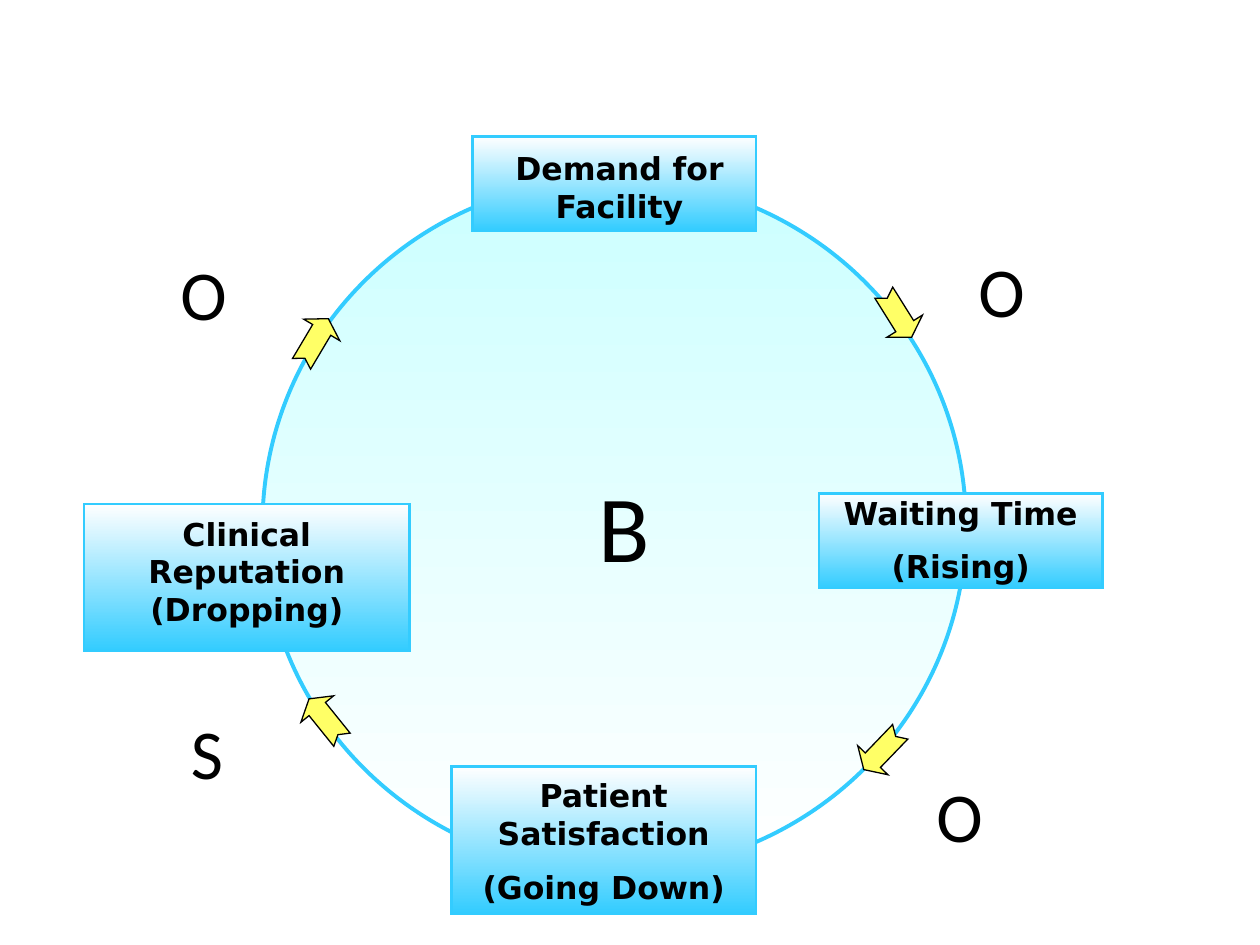
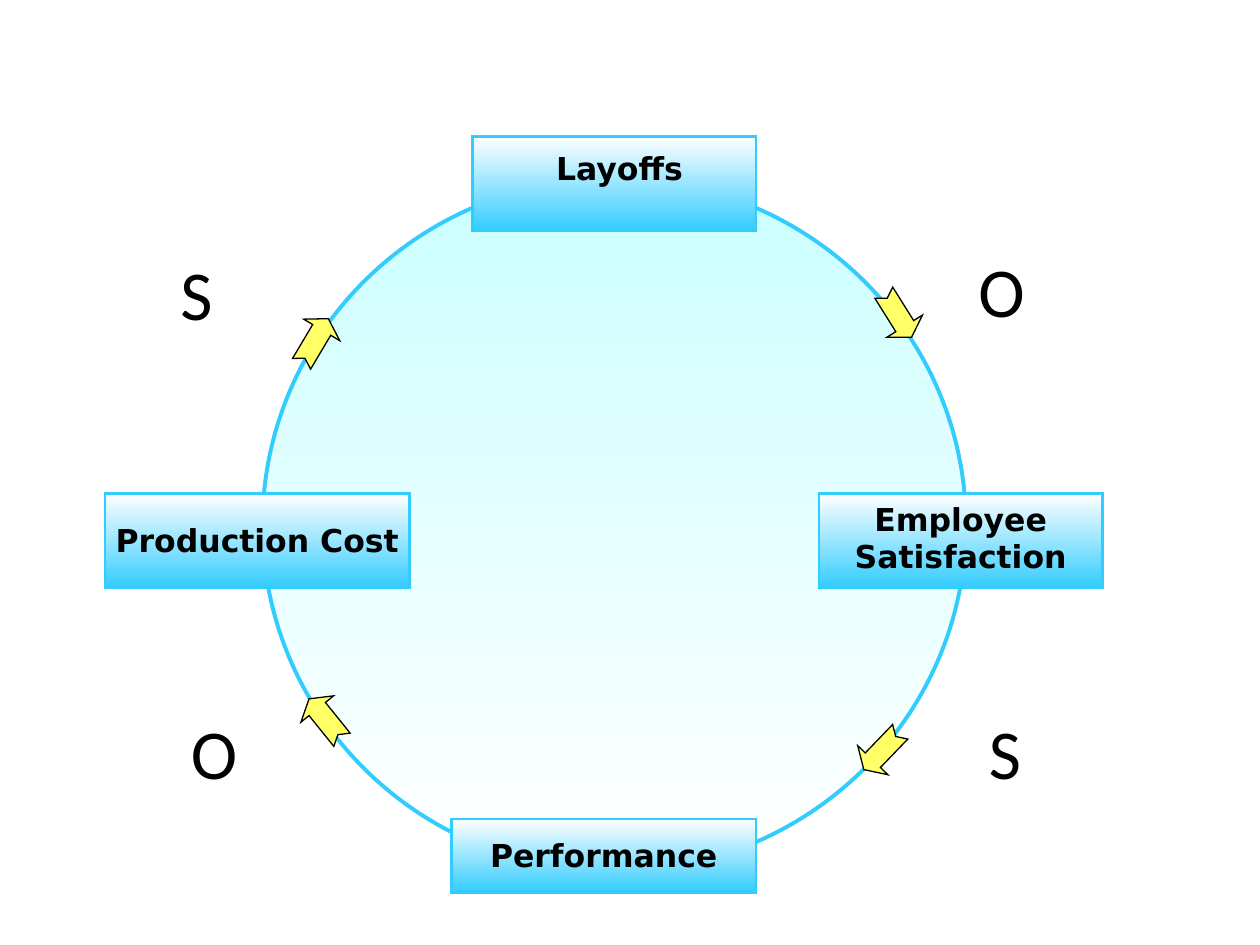
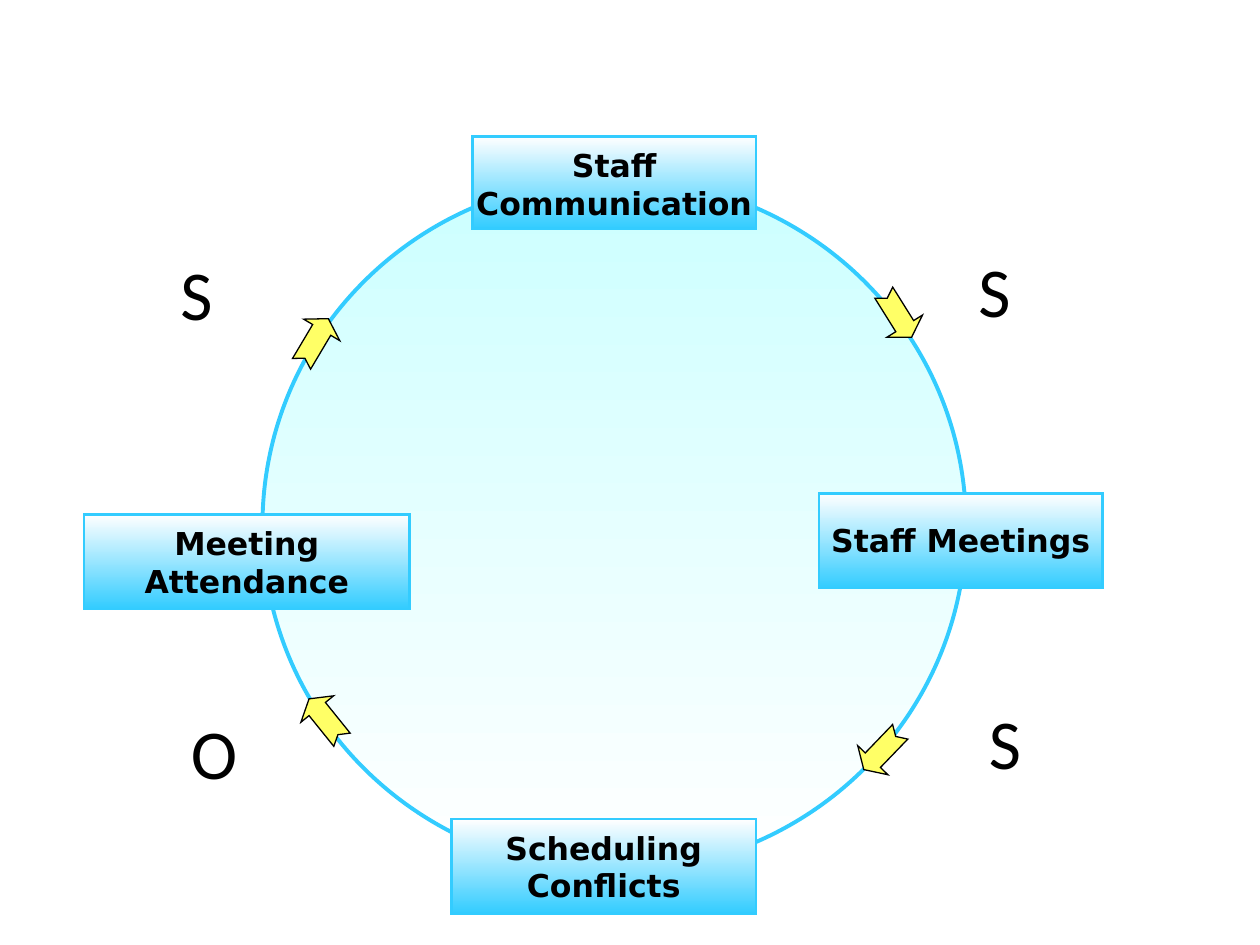
from lxml import etree
from pptx import Presentation
from pptx.dml.color import RGBColor
from pptx.enum import shapes, text
from pptx.oxml import ns
from pptx.util import Pt

HUES = {"sky": "33CCFF", "pale": "CCFFFF", "white": "FFFFFF",
        "gold": "FFFF66", "black": "000000"}
KIND = shapes.MSO_SHAPE
LABEL = ("DejaVu Sans", 18, True)
MARK = ("Calibri", 40, False)

# Arrows on the ring: left, top, turn
ARROWS = [(165, 183, 300.7), (171, 399, 231.1), (489, 417, 133.9), (498, 168, 58)]

# Nodes run left, top, bottom, right: box, caption frame, caption lines.
# Marks: letter, left, top, width.
LOOPS = [
    {"mid": "B",
     "nodes": [
         ((48, 288, 186, 84), (42, 290.5, 198, 71), ["Clinical Reputation (Dropping)"]),
         ((270, 78, 162, 54), (276, 81.5, 156, 50.5), ["Demand for Facility"]),
         ((258, 438, 174, 84), (252, 440, 186, 81), ["Patient Satisfaction", "(Going Down)"]),
         ((468, 282, 162, 54), (462, 278.5, 174, 61), ["Waiting Time", "(Rising)"])],
     "marks": [("O", 552, 138, 46), ("O", 96, 139.5, 46),
               ("S", 102, 402, 42.5), ("O", 528, 438, 46)]},
    {"mid": "",
     "nodes": [
         ((60, 282, 174, 54), (48, 294, 198, 29), ["Production Cost"]),
         ((270, 78, 162, 54), (276, 81.5, 156, 29), ["Layoffs"]),
         ((258, 468, 174, 42), (252, 474, 186, 29), ["Performance"]),
         ((468, 282, 162, 54), (462, 282, 174, 50.5), ["Employee Satisfaction"])],
     "marks": [("O", 552, 138, 46), ("S", 96, 139.5, 42.5),
               ("O", 102, 402, 46), ("S", 558, 402, 42.5)]},
    {"mid": "",
     "nodes": [
         ((48, 294, 186, 54), (42, 296, 198, 50.5), ["Meeting Attendance"]),
         ((270, 78, 162, 52.5), (264, 80, 174, 50.5), ["Staff Communication"]),
         ((258, 468, 174, 54), (252, 470, 186, 50.5), ["Scheduling Conflicts"]),
         ((468, 282, 162, 54), (462, 294, 174, 29), ["Staff Meetings"])],
     "marks": [("S", 552, 138, 33), ("S", 96, 139.5, 42.5),
               ("O", 102, 402, 46), ("S", 558, 396, 42.5)]},
]


def draw(slide, kind, frame, fills, edge, width):
    """Add a sharp-cornered shape with a plain fill, or a top-down blend of two hues."""
    shape = slide.shapes.add_shape(kind, *[Pt(n) for n in frame])
    shape.shadow.inherit = False
    if len(fills) == 1:
        shape.fill.solid()
        shape.fill.fore_color.rgb = RGBColor.from_string(HUES[fills[0]])
    else:
        shape.fill.gradient()
        shape.fill.gradient_angle = 270
        for stop, hue in zip(shape.fill.gradient_stops, fills):
            stop.color.rgb = RGBColor.from_string(HUES[hue])
    shape.line.color.rgb = RGBColor.from_string(HUES[edge])
    shape.line.width = Pt(width)
    outline = shape.element.spPr.find(ns.qn("a:ln"))
    etree.SubElement(outline, ns.qn("a:miter"), lim="800000")
    return shape


def write(para, words, face, size, bold):
    """Add one run of black text to a paragraph."""
    run = para.add_run()
    run.text = words
    run.font.name, run.font.size, run.font.bold = face, Pt(size), bold
    run.font.color.rgb = RGBColor.from_string(HUES["black"])


deck = Presentation()
deck.slide_width, deck.slide_height = Pt(720), Pt(540)

for loop in LOOPS:
    slide = deck.slides.add_slide(deck.slide_layouts[6])

    ring = draw(slide, KIND.OVAL, (150, 102, 402, 396), ["pale", "white"], "sky", 2.25)
    if loop["mid"]:
        frame = ring.text_frame
        frame.word_wrap = False
        frame.vertical_anchor = text.MSO_ANCHOR.MIDDLE
        para = frame.paragraphs[0]
        para.alignment = text.PP_ALIGN.CENTER
        write(para, " ", "Calibri", 48, False)
        write(para, loop["mid"], "Calibri", 54, False)

    for box, _, _ in loop["nodes"]:
        draw(slide, KIND.RECTANGLE, box, ["white", "sky"], "sky", 1.5)

    for _, place, lines in loop["nodes"]:
        frame = slide.shapes.add_textbox(*[Pt(n) for n in place]).text_frame
        frame.word_wrap = True
        frame.auto_size = text.MSO_AUTO_SIZE.SHAPE_TO_FIT_TEXT
        for i, line in enumerate(lines):
            para = frame.add_paragraph() if i else frame.paragraphs[0]
            para.alignment = text.PP_ALIGN.CENTER
            para.space_before = Pt(9)
            write(para, line, *LABEL)

    for left, top, turn in ARROWS:
        arrow = draw(slide, KIND.NOTCHED_RIGHT_ARROW, (left, top, 30, 24),
                     ["gold"], "black", 0.75)
        arrow.adjustments[0], arrow.adjustments[1] = 0.5, 0.31
        arrow.rotation = turn

    for letter, left, top, width in loop["marks"]:
        frame = slide.shapes.add_textbox(Pt(left), Pt(top), Pt(width), Pt(55.5)).text_frame
        frame.word_wrap = False
        frame.auto_size = text.MSO_AUTO_SIZE.SHAPE_TO_FIT_TEXT
        write(frame.paragraphs[0], letter, *MARK)

deck.save("out.pptx")
